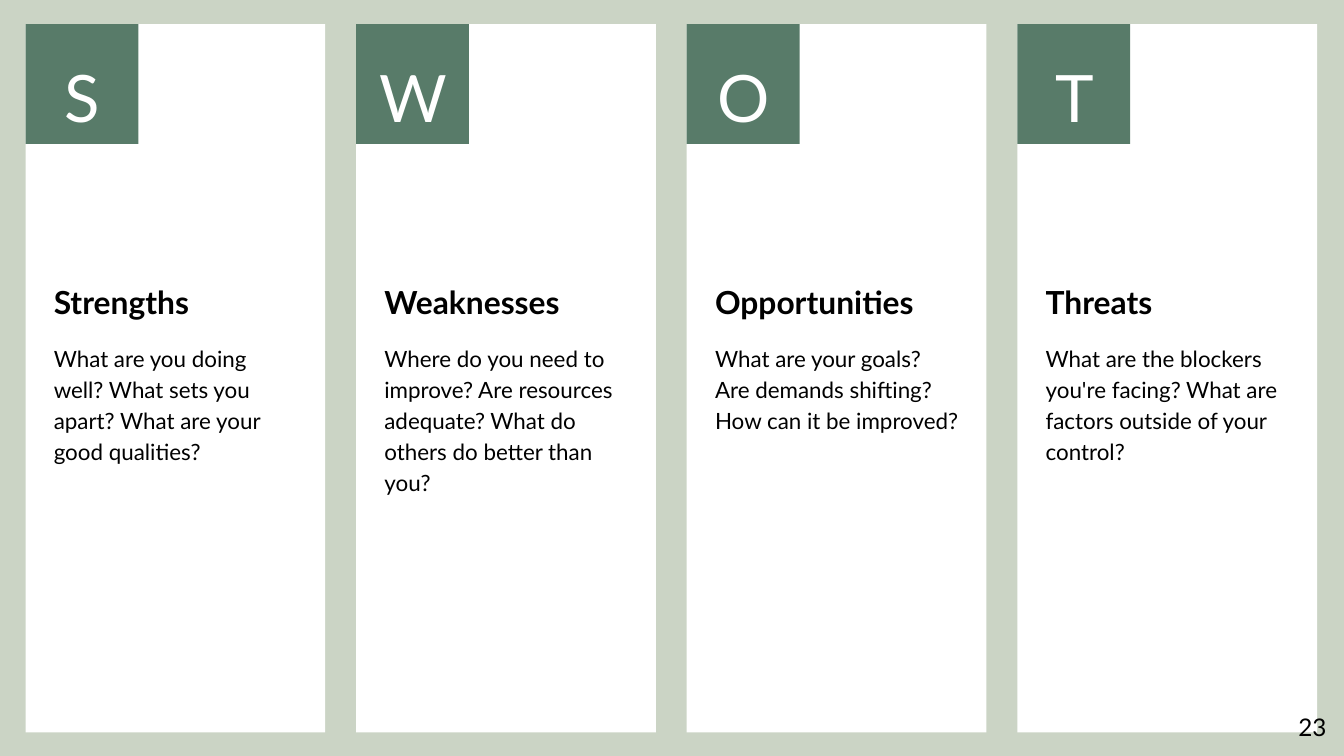
import pptx
import pptx.util
import pptx.dml.color
import pptx.enum.shapes
import pptx.enum.text

Inches = pptx.util.Inches
ALIGN = pptx.enum.text.PP_ALIGN
ANCHOR = pptx.enum.text.MSO_ANCHOR
FIT = pptx.enum.text.MSO_AUTO_SIZE

COLORS = {"back": "CBD4C5", "card": "FFFFFF", "badge": "587B69",
          "light": "FFFFFF", "text": "000000"}
FONT = "Lato"

# Card grid, in inches
LEFT, TOP, STEP = 0.19, 0.18, 2.46
CARD = (2.23, 5.27)
BADGE = (0.84, 0.89)
PAD = 0.21
WIDTH = 1.82

ITEMS = [
    ("Strengths", "What are you doing well? What sets you apart? "
     "What are your good qualities?", 0.9),
    ("Weaknesses", "Where do you need to improve? Are resources adequate? "
     "What do others do better than you?", 1.13),
    ("Opportunities", "What are your goals? Are demands shifting? "
     "How can it be improved?", 0.9),
    ("Threats", "What are the blockers you're facing? "
     "What are factors outside of your control?", 0.9),
]


def paint(fill, name):
    fill.solid()
    fill.fore_color.rgb = pptx.dml.color.RGBColor.from_string(COLORS[name])


def add_rect(shapes, left, size, name):
    kind = pptx.enum.shapes.MSO_SHAPE.RECTANGLE
    rect = shapes.add_shape(kind, *map(Inches, (left, TOP, *size)))
    rect.shadow.inherit = False
    paint(rect.fill, name)
    rect.line.fill.background()


def add_text(shapes, box, text, size, color="text", bold=False,
             align=ALIGN.LEFT, space=1.15, anchor=ANCHOR.TOP, fit=True):
    frame = shapes.add_textbox(*map(Inches, box)).text_frame
    frame.word_wrap = True
    frame.auto_size = FIT.SHAPE_TO_FIT_TEXT if fit else FIT.NONE
    frame.vertical_anchor = anchor
    frame.margin_left = frame.margin_right = 0
    frame.margin_top = frame.margin_bottom = 0
    frame.text = text
    line = frame.paragraphs[0]
    line.alignment = align
    line.line_spacing = space
    font = line.runs[0].font
    font.name, font.size, font.bold = FONT, pptx.util.Pt(size), bold
    paint(font.fill, color)


def add_card(shapes, left):
    """Add one white column with its badge square."""
    add_rect(shapes, left, CARD, "card")
    add_rect(shapes, left, BADGE, "badge")


def add_letter(shapes, left, text):
    add_text(shapes, (left + 0.08, 0.37, 0.69, 0.59), text, 35,
             color="light", align=ALIGN.CENTER, space=1.1)


def add_notes(shapes, left, head, body, height):
    """Group a heading with its questions."""
    group = shapes.add_group_shape().shapes
    add_text(group, (left + PAD, 2.06, WIDTH, 0.29), head, 17, bold=True)
    add_text(group, (left + PAD, 2.54, WIDTH, height), body, 12)


def main():
    deck = pptx.Presentation()
    deck.slide_width = Inches(10)
    deck.slide_height = deck.slide_width * 9 // 16
    slide = deck.slides.add_slide(deck.slide_layouts[6])
    paint(slide.background.fill, "back")
    shapes = slide.shapes
    lefts = [LEFT + col * STEP for col in range(len(ITEMS))]
    for left in lefts:
        add_card(shapes, left)
    for left, item in zip(lefts, ITEMS):
        add_letter(shapes, left, item[0][0])
    for left, item in zip(lefts, ITEMS):
        add_notes(shapes, left, *item)
    add_text(shapes, (9.27, 5.19, 0.6, 0.43), "23", 13,
             align=ALIGN.RIGHT, space=1.0, anchor=ANCHOR.MIDDLE, fit=False)
    deck.save("out.pptx")


if __name__ == "__main__":
    main()
